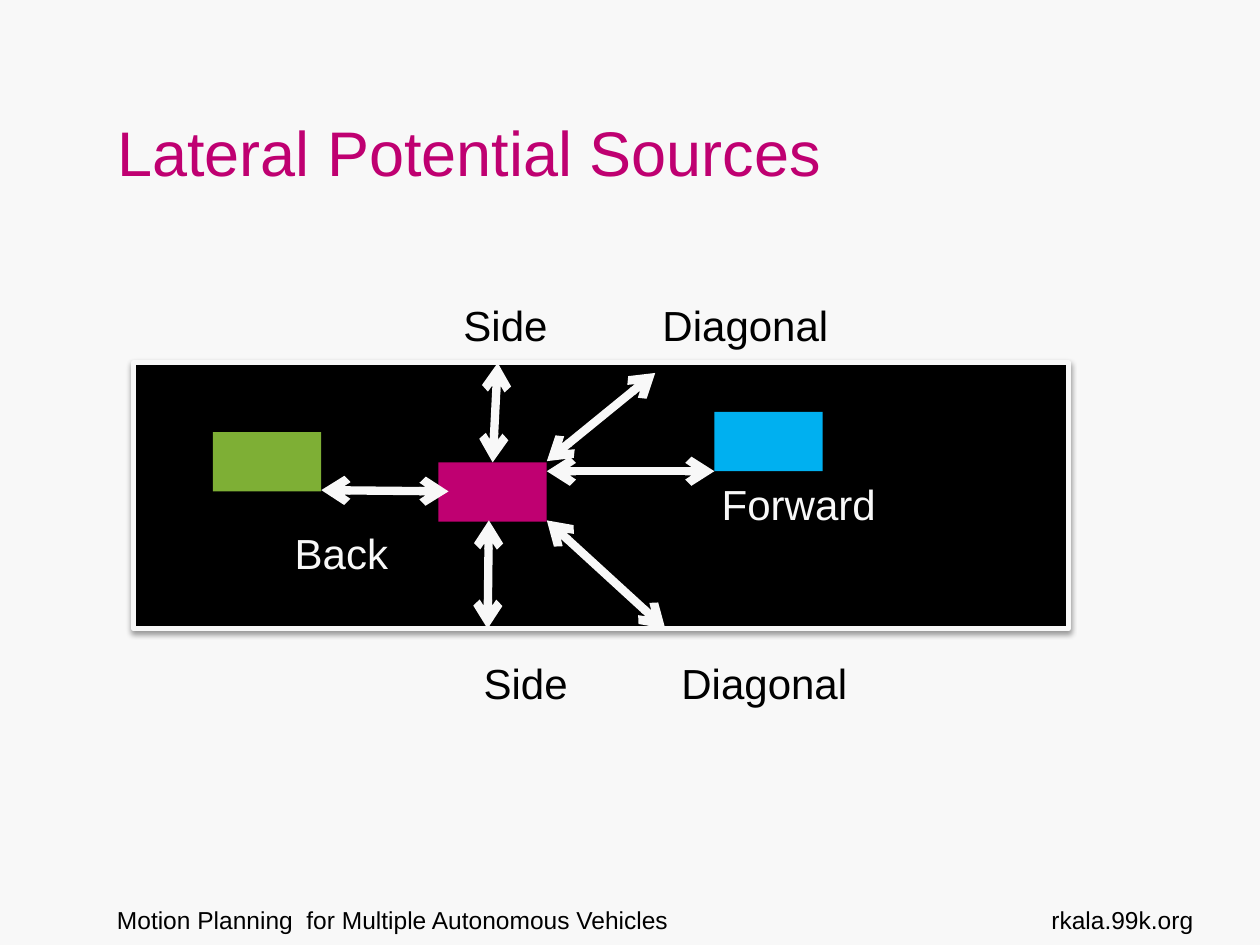
"""Build the slide on lateral potential sources around a vehicle."""
from lxml import etree
from pptx import Presentation
from pptx import util as u
from pptx.dml.color import RGBColor
from pptx.enum import shapes, text
from pptx.oxml import parse_xml
from pptx.oxml.ns import nsdecls, qn

COLORS = {
    "paper": "F8F8F8",
    "ink": "000000",
    "magenta": "BF0071",
    "green": "7EAF35",
    "blue": "00B0F0",
}


def write(box, words, size, color, align=text.PP_ALIGN.LEFT):
    box.text_frame.text = words
    para = box.text_frame.paragraphs[0]
    para.alignment = align
    span = para.runs[0]
    span.font.name = "Arial"
    span.font.size = u.Pt(size)
    span.font.color.rgb = RGBColor.from_string(COLORS[color])


def add_block(page, left, top, width, height, color):
    block = page.shapes.add_shape(
        shapes.MSO_SHAPE.RECTANGLE, *map(u.Inches, (left, top, width, height)))
    block.shadow.inherit = False
    block.fill.solid()
    block.fill.fore_color.rgb = RGBColor.from_string(COLORS[color])
    block.line.fill.background()
    return block


deck = Presentation()
deck.slide_width, deck.slide_height = u.Inches(10), u.Inches(7.5)
page = deck.slides.add_slide(deck.slide_layouts[5])
page.background.fill.solid()
page.background.fill.fore_color.rgb = RGBColor.from_string(COLORS["paper"])

title = page.shapes.title
title.left, title.top = u.Inches(0.83), u.Inches(0.3)
title.width, title.height = u.Inches(6.77), u.Inches(1.25)
write(title, "Lateral Potential Sources", 36, "magenta")
title.text_frame.word_wrap = False
title.text_frame.auto_size = text.MSO_AUTO_SIZE.NONE
title.text_frame.vertical_anchor = text.MSO_ANCHOR.BOTTOM

road = add_block(page, 1.06, 2.88, 7.42, 2.11, "ink")
road.line.color.rgb = RGBColor.from_string(COLORS["paper"])
road.line.width = u.Pt(3)
effects = road._element.spPr.find(qn("a:effectLst"))
effects.append(parse_xml(
    f'<a:outerShdw {nsdecls("a")} blurRad="{u.Pt(3.1)}" dist="{u.Pt(1.6)}" '
    f'dir="5400000" rotWithShape="0"><a:srgbClr val="{COLORS["ink"]}">'
    '<a:alpha val="38000"/></a:srgbClr></a:outerShdw>'))

for left, top, color in [
    (1.69, 3.43, "green"),
    (3.48, 3.67, "magenta"),
    (5.67, 3.27, "blue"),
]:
    add_block(page, left, top, 0.86, 0.47, color)

for ends in [
    (4.34, 3.66, 5.2, 2.96),
    (2.55, 3.89, 3.56, 3.9),
    (3.91, 3.67, 3.95, 2.88),
    (3.88, 4.13, 3.87, 4.99),
    (4.34, 3.74, 5.67, 3.74),
    (4.34, 4.13, 5.28, 4.99),
]:
    arrow = page.shapes.add_connector(
        shapes.MSO_CONNECTOR.STRAIGHT, *map(u.Inches, ends))
    arrow.line.color.rgb = RGBColor.from_string(COLORS["paper"])
    arrow.line.width = u.Pt(4.75)
    for tip in ("a:headEnd", "a:tailEnd"):
        etree.SubElement(arrow.line._get_or_add_ln(), qn(tip), type="arrow")
    etree.SubElement(arrow._element.spPr, qn("a:effectLst"))

LEFT, RIGHT = text.PP_ALIGN.LEFT, text.PP_ALIGN.RIGHT
for words, left, top, width, height, size, color, align in [
    ("Forward", 5.63, 3.75, 2.6, 0.5, 24, "paper", LEFT),
    ("Side", 3.74, 5.17, 1.02, 0.5, 24, "ink", LEFT),
    ("Side", 3.58, 2.33, 1.02, 0.5, 24, "ink", LEFT),
    ("Back", 2.24, 4.14, 1.02, 0.5, 24, "paper", LEFT),
    ("Diagonal", 5.16, 2.33, 2.6, 0.5, 24, "ink", LEFT),
    ("Diagonal", 5.31, 5.17, 2.6, 0.5, 24, "ink", LEFT),
    ("Motion Planning  for Multiple Autonomous Vehicles",
     0.83, 7.13, 6.93, 0.52, 14, "ink", LEFT),
    ("rkala.99k.org", 8.07, 7.13, 1.5, 0.52, 14, "ink", RIGHT),
]:
    box = page.shapes.add_textbox(*map(u.Inches, (left, top, width, height)))
    box.text_frame.word_wrap = True
    write(box, words, size, color, align)

deck.save("out.pptx")
